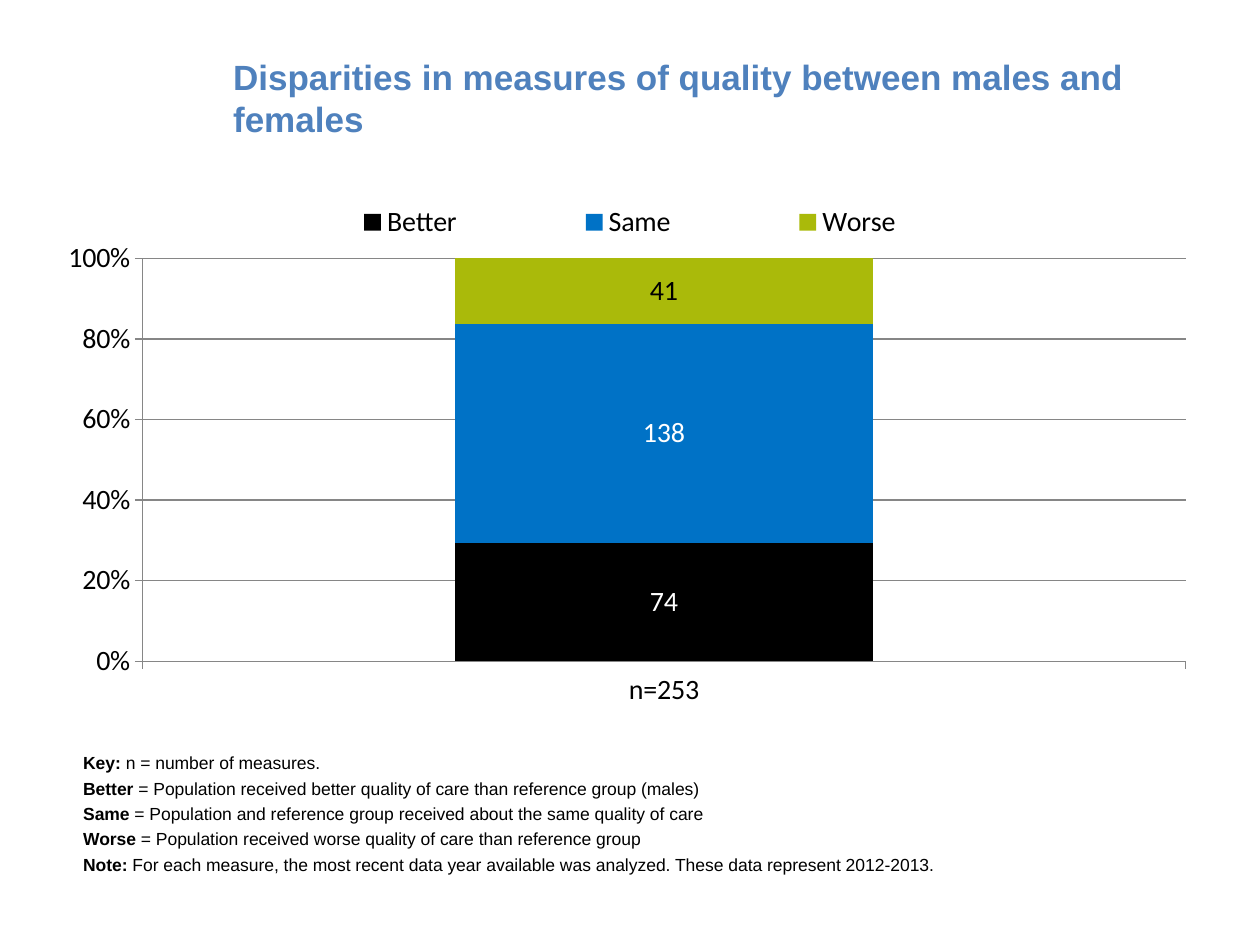
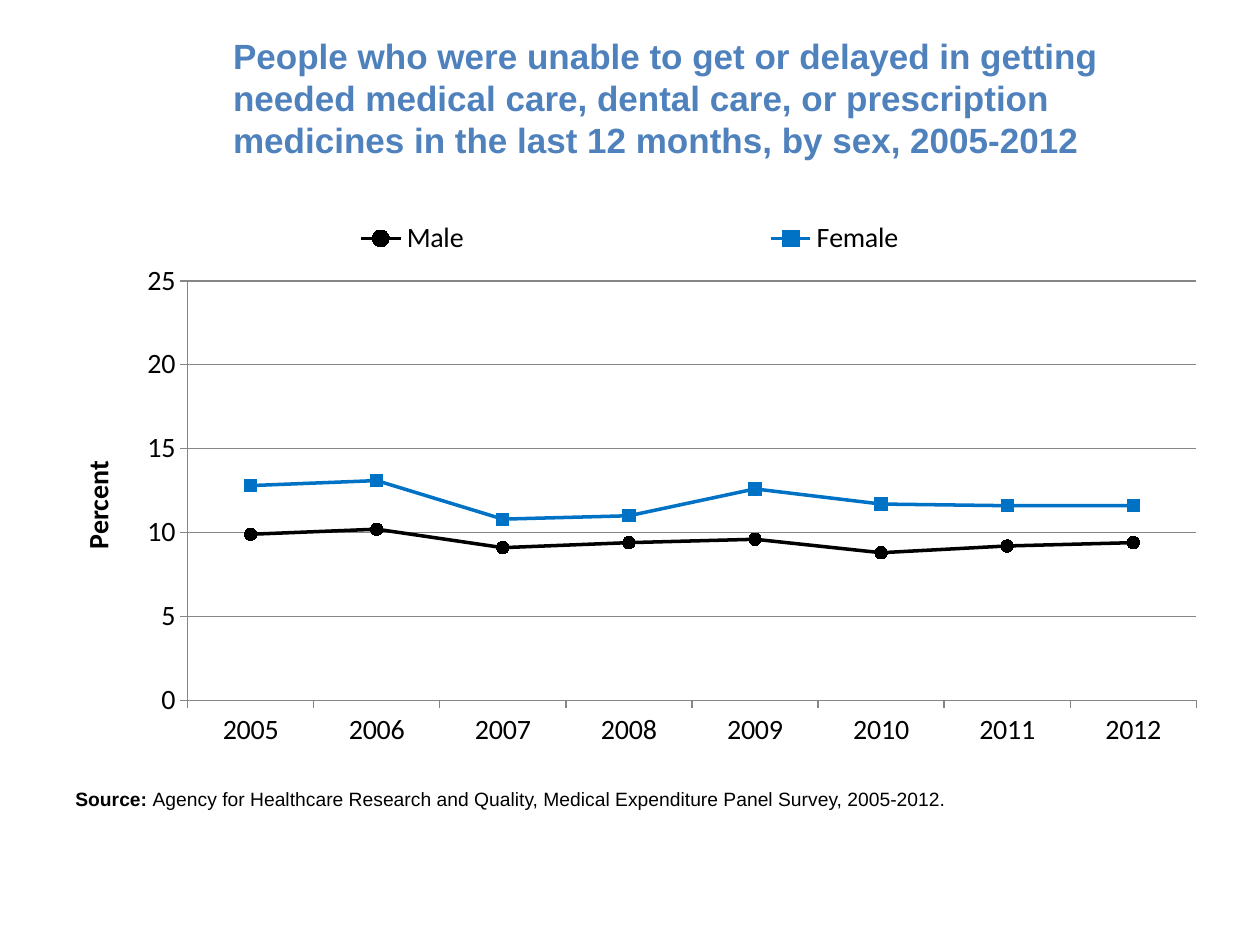
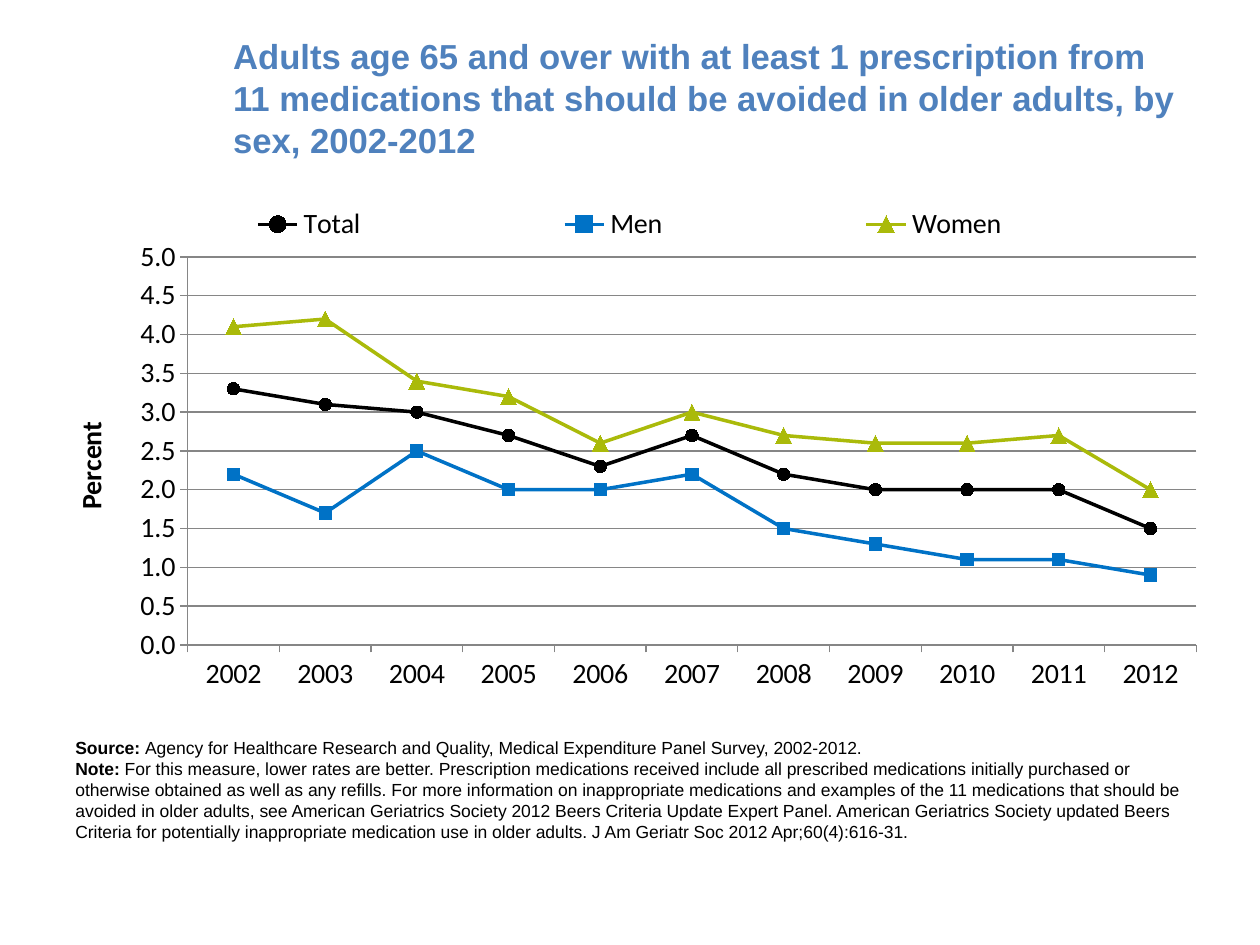
import pptx
import pptx.chart.data
import pptx.dml.color
import pptx.enum.chart
import pptx.enum.text
import pptx.oxml
import pptx.oxml.ns
import pptx.util
from lxml import etree

Pt = pptx.util.Pt
qn = pptx.oxml.ns.qn
RGBColor = pptx.dml.color.RGBColor
Kind = pptx.enum.chart.XL_CHART_TYPE
Mark = pptx.enum.chart.XL_MARKER_STYLE
Fit = pptx.enum.text.MSO_AUTO_SIZE

BLACK = RGBColor(0x00, 0x00, 0x00)
WHITE = RGBColor(0xFF, 0xFF, 0xFF)
BLUE = RGBColor(0x00, 0x72, 0xC6)
GREEN = RGBColor(0xAA, 0xBA, 0x0A)
TITLE = RGBColor(0x4F, 0x81, 0xBD)
GRAY = RGBColor(0x86, 0x86, 0x86)
HUES = (BLACK, BLUE, GREEN)
MARKS = ((Mark.CIRCLE, 7), (Mark.SQUARE, 7), (Mark.TRIANGLE, 9))


class Deck:
    """Build report slides that share one title, chart and note style."""

    def __init__(self):
        self.show = pptx.Presentation()
        self.show.slide_width = Pt(720)
        self.show.slide_height = Pt(540)
        self.slide = None

    def start(self, title, layout=5, size=20):
        self.slide = self.show.slides.add_slide(self.show.slide_layouts[layout])
        shape = self.slide.shapes.title
        self.place(shape, 126, 21.6, 558, 68.4)
        frame = shape.text_frame
        frame.text = title
        frame.auto_size = Fit.NONE
        frame.vertical_anchor = pptx.enum.text.MSO_ANCHOR.MIDDLE
        para = frame.paragraphs[0]
        para.alignment = pptx.enum.text.PP_ALIGN.LEFT
        self.style(para.font, "Arial", size, TITLE, True)

    def place(self, shape, left, top, width, height):
        shape.left, shape.top = Pt(left), Pt(top)
        shape.width, shape.height = Pt(width), Pt(height)

    def style(self, font, name="Calibri", size=16, color=BLACK, bold=None):
        font.name = name
        font.size = Pt(size)
        font.color.rgb = color
        font.bold = bold

    def label(self, frame, notes, size, gap=0):
        for num, (head, text) in enumerate(notes):
            para = frame.add_paragraph() if num else frame.paragraphs[0]
            props = para._p.get_or_add_pPr()
            props.set("marL", "0")
            props.set("indent", "0")
            etree.SubElement(props, qn("a:buNone"))
            para.space_before = Pt(gap if num else 0)
            self.style(para.font, "Arial", size)
            for part, bold in ((head + " ", True), (text, False)):
                run = para.add_run()
                run.text = part
                run.font.bold = bold

    def list(self, notes):
        shape = self.slide.placeholders[1]
        self.place(shape, 40.32, 426.24, 648, 77.76)
        shape.text_frame.auto_size = Fit.NONE
        self.label(shape.text_frame, notes, 10, 2.5)

    def note(self, top, height, notes, size):
        box = self.slide.shapes.add_textbox(Pt(36), Pt(top), Pt(648), Pt(height))
        box.text_frame.word_wrap = True
        box.text_frame.auto_size = Fit.SHAPE_TO_FIT_TEXT
        self.label(box.text_frame, notes, size)

    def frame(self, node, spot, area, inner=False):
        for old in node.findall(qn("c:layout")):
            node.remove(old)
        layout = etree.Element(qn("c:layout"))
        manual = etree.SubElement(layout, qn("c:manualLayout"))
        pairs = [("layoutTarget", "inner")] if inner else []
        pairs += [("xMode", "edge"), ("yMode", "edge"), *zip("xywh", area)]
        for tag, val in pairs:
            etree.SubElement(manual, qn("c:" + tag)).set("val", str(val))
        node.insert(spot, layout)

    def chart(self, kind, cats, rows, height, plot, legend, step, form):
        data = pptx.chart.data.CategoryChartData()
        data.categories = cats
        for name, vals in rows.items():
            data.add_series(name, vals)
        chart = self.slide.shapes.add_chart(
            kind, Pt(36), Pt(115.2), Pt(648), Pt(height), data).chart
        self.style(chart.font, "Arial", 10)
        chart.has_title = False
        chart.has_legend = True
        chart.legend.position = pptx.enum.chart.XL_LEGEND_POSITION.TOP
        chart.legend.include_in_layout = False
        self.style(chart.legend.font)
        self.frame(chart.legend._element, 1, legend)
        area = chart._chartSpace.find(".//" + qn("c:plotArea"))
        self.frame(area, 0, plot, True)
        chart.plots[0].vary_by_categories = False
        self.axes(chart, step, form)
        return chart

    def axes(self, chart, step, form):
        for axis in (chart.category_axis, chart.value_axis):
            axis.major_tick_mark = pptx.enum.chart.XL_TICK_MARK.OUTSIDE
            self.style(axis.tick_labels.font)
            self.line(axis.format.line, GRAY, 0.75)
        axis.has_major_gridlines = True
        self.line(axis.major_gridlines.format.line, GRAY, 0.75)
        axis.major_unit = step
        axis.tick_labels.number_format = form
        axis.tick_labels.number_format_is_linked = False
        node = axis._element
        if node.find(qn("c:crossBetween")) is None:
            cross = etree.Element(qn("c:crossBetween"))
            cross.set("val", "between")
            node.find(qn("c:crosses")).addnext(cross)

    def line(self, line, color, width):
        line.color.rgb = color
        line.width = Pt(width)

    def stack(self, cats, rows, **rest):
        chart = self.chart(Kind.COLUMN_STACKED_100, cats, rows, **rest)
        chart.plots[0].gap_width = 150
        chart.plots[0].overlap = 100
        for part, hue, ink in zip(chart.series, HUES, (WHITE, WHITE, BLACK)):
            part.format.fill.solid()
            part.format.fill.fore_color.rgb = hue
            part.data_labels.show_value = True
            self.style(part.data_labels.font, color=ink)

    def trend(self, cats, rows, top, **rest):
        chart = self.chart(Kind.LINE_MARKERS, cats, rows, **rest)
        axis = chart.value_axis
        axis.minimum_scale, axis.maximum_scale = 0, top
        frame = axis.axis_title.text_frame
        frame.text = "Percent"
        self.style(frame.paragraphs[0].font, bold=True)
        for part, hue, (mark, size) in zip(chart.series, HUES, MARKS):
            part.smooth = False
            self.line(part.format.line, hue, 2)
            part.marker.style = mark
            part.marker.size = size
            part.marker.format.fill.solid()
            part.marker.format.fill.fore_color.rgb = hue
            part.marker.format.line.color.rgb = hue


def main():
    deck = Deck()

    deck.start("Disparities in measures of quality between males and females", 1)
    deck.stack(
        ["n=253"], {"Better": [74], "Same": [138], "Worse": [41]},
        height=295.2, plot=(0.07, 0.11, 0.92, 0.78),
        legend=(0.16, 0, 0.68, 0.08), step=0.2, form="0%")
    deck.list([
        ("Key:", "n = number of measures."),
        ("Better", "= Population received better quality of care than reference group (males)"),
        ("Same", "= Population and reference group received about the same quality of care"),
        ("Worse", "= Population received worse quality of care than reference group"),
        ("Note:", "For each measure, the most recent data year available was analyzed. "
                  "These data represent 2012-2013."),
    ])

    deck.start("People who were unable to get or delayed in getting needed medical care, "
               "dental care, or prescription medicines in the last 12 months, by sex, 2005-2012")
    deck.trend(
        [str(year) for year in range(2005, 2013)],
        {"Male": [9.9, 10.2, 9.1, 9.4, 9.6, 8.8, 9.2, 9.4],
         "Female": [12.8, 13.1, 10.8, 11, 12.6, 11.7, 11.6, 11.6]},
        top=25, height=324, plot=(0.11, 0.14, 0.89, 0.74),
        legend=(0, 0, 1, 0.13), step=5, form="0")
    deck.note(446.4, 20.88, [
        ("Source:", "Agency for Healthcare Research and Quality, "
                    "Medical Expenditure Panel Survey, 2005-2012."),
    ], 11)

    deck.start("Adults age 65 and over with at least 1 prescription from 11 medications "
               "that should be avoided in older adults, by sex, 2002-2012", size=19.8)
    deck.trend(
        [str(year) for year in range(2002, 2013)],
        {"Total": [3.3, 3.1, 3, 2.7, 2.3, 2.7, 2.2, 2, 2, 2, 1.5],
         "Men": [2.2, 1.7, 2.5, 2, 2, 2.2, 1.5, 1.3, 1.1, 1.1, 0.9],
         "Women": [4.1, 4.2, 3.4, 3.2, 2.6, 3, 2.7, 2.6, 2.6, 2.7, 2]},
        top=5, height=288, plot=(0.11, 0.11, 0.89, 0.77),
        legend=(0, 0, 1, 0.09), step=0.5, form="0.0")
    deck.note(417.6, 79.92, [
        ("Source:", "Agency for Healthcare Research and Quality, "
                    "Medical Expenditure Panel Survey, 2002-2012."),
        ("Note:", "For this measure, lower rates are better. Prescription medications received "
                  "include all prescribed medications initially purchased or otherwise obtained "
                  "as well as any refills. For more information on inappropriate medications and "
                  "examples of the 11 medications that should be avoided in older adults, see "
                  "American Geriatrics Society 2012 Beers Criteria Update Expert Panel. American "
                  "Geriatrics Society updated Beers Criteria for potentially inappropriate "
                  "medication use in older adults. J Am Geriatr Soc 2012 Apr;60(4):616-31."),
    ], 10)

    deck.show.save("out.pptx")


if __name__ == "__main__":
    main()
